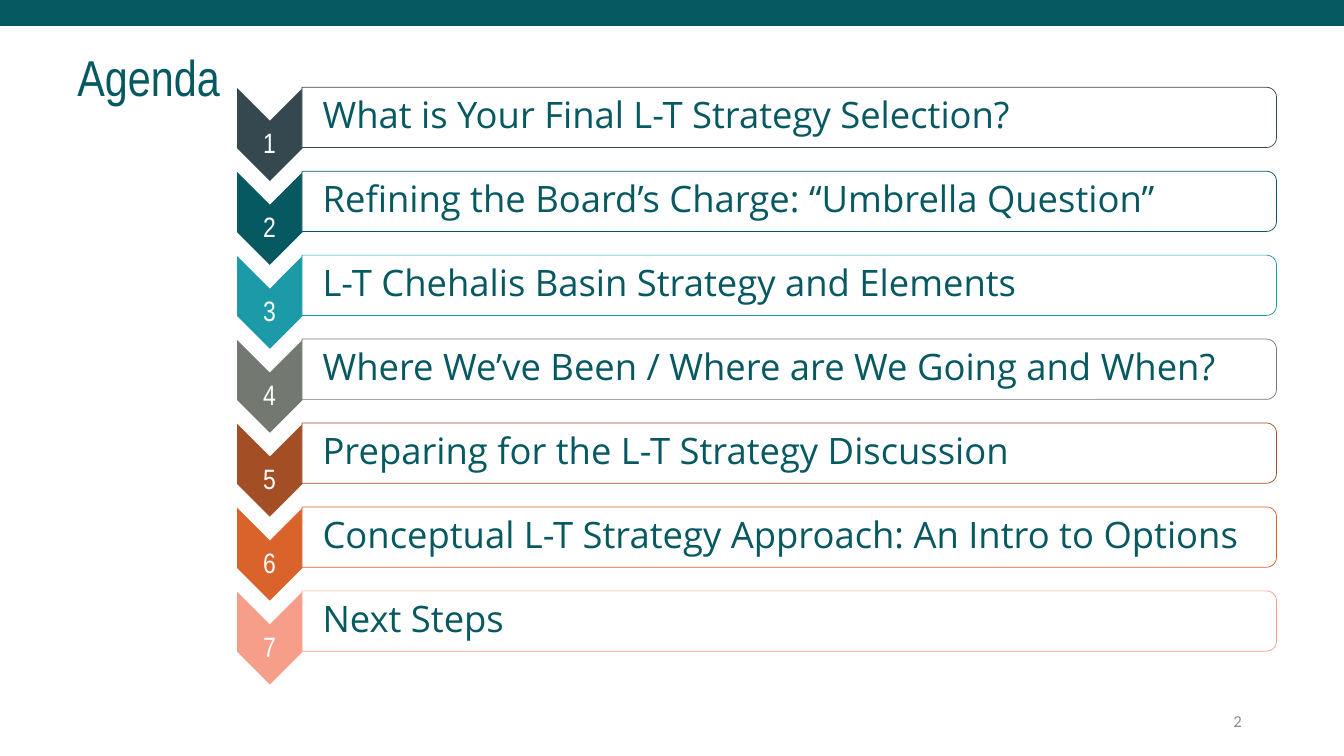
import pptx
import pptx.util
import pptx.dml.color
import pptx.enum.shapes
import pptx.enum.text
from lxml import etree

Cm = pptx.util.Cm
Pt = pptx.util.Pt
SHAPES = pptx.enum.shapes.MSO_SHAPE
ALIGN = pptx.enum.text.PP_ALIGN

COLOURS = {
    "slate": "354850",
    "teal": "065861",
    "aqua": "1D9AA7",
    "grey": "737970",
    "rust": "A34E25",
    "orange": "D9632B",
    "salmon": "F79E8B",
    "white": "FFFFFF",
    "page_number": "8C8C8C",
}
TITLE = "Agenda"
PAGE_NUMBER = "2"
AGENDA = [
    ("What is Your Final L-T Strategy Selection?", "slate"),
    ("Refining the Board’s Charge: “Umbrella Question”", "teal"),
    ("L-T Chehalis Basin Strategy and Elements", "aqua"),
    ("Where We’ve Been / Where are We Going and When?", "grey"),
    ("Preparing for the L-T Strategy Discussion", "rust"),
    ("Conceptual L-T Strategy Approach: An Intro to Options", "orange"),
    ("Next Steps", "salmon"),
]

SLIDE_WIDTH, SLIDE_HEIGHT = 33.87, 19.05
ROW_PITCH = 2.115
CHEVRON_CENTRE = (6.8, 3.39)
CHEVRON_SIZE = (2.34, 1.65)
PANEL_CENTRE = (19.89, 2.96)
PANEL_SIZE = (1.52, 24.56)
NUMBER_BOX = (5.97, 3.03, 1.65, 0.71)
ITEM_BOX = (7.62, 2.26, 24.49, 1.37)


def colour(name):
    return pptx.dml.color.RGBColor.from_string(COLOURS[name])


def add_text(slide, text, box, *, size, font, color="teal", align=ALIGN.LEFT,
             spacing=1.0, insets=(0.25, 0.13, 0.25, 0.13)):
    shape = slide.shapes.add_textbox(*map(Cm, box))
    frame = shape.text_frame
    frame.word_wrap = True
    frame.vertical_anchor = pptx.enum.text.MSO_ANCHOR.MIDDLE
    (frame.margin_left, frame.margin_top,
     frame.margin_right, frame.margin_bottom) = map(Cm, insets)
    paragraph = frame.paragraphs[0]
    paragraph.alignment = align
    paragraph.line_spacing = spacing
    run = paragraph.add_run()
    run.text = text
    run.font.size = Pt(size)
    run.font.name = font
    run.font.color.rgb = colour(color)


def add_block(slide, kind, box, fill, line=None, line_width=1.0, rotation=0):
    shape = slide.shapes.add_shape(kind, *map(Cm, box))
    shape.shadow.inherit = False
    shape.rotation = rotation
    shape.fill.solid()
    shape.fill.fore_color.rgb = colour(fill)
    if line:
        shape.line.color.rgb = colour(line)
        shape.line.width = Pt(line_width)
    else:
        shape.line.fill.background()
    return shape


def set_opacity(shape, percent):
    namespace = pptx.oxml.ns.qn("a:alpha")
    fill_colour = shape.fill._xPr.find(pptx.oxml.ns.qn("a:solidFill"))[0]
    etree.SubElement(fill_colour, namespace).set("val", str(percent * 1000))


def centred_box(centre, size, offset):
    return (centre[0] - size[0] / 2, centre[1] - size[1] / 2 + offset, *size)


def lowered_box(box, offset):
    left, top, width, height = box
    return left, top + offset, width, height


def add_agenda_row(slide, index, text, accent):
    offset = index * ROW_PITCH
    add_block(slide, SHAPES.CHEVRON,
              centred_box(CHEVRON_CENTRE, CHEVRON_SIZE, offset),
              accent, rotation=90)
    add_text(slide, str(index + 1), lowered_box(NUMBER_BOX, offset),
             size=20, font="Arial Narrow", color="white",
             align=ALIGN.CENTER, spacing=1.5, insets=(0.03,) * 4)
    panel = add_block(slide, SHAPES.ROUND_2_SAME_RECTANGLE,
                      centred_box(PANEL_CENTRE, PANEL_SIZE, offset),
                      "white", accent, 0.5, rotation=90)
    set_opacity(panel, 90)
    add_text(slide, text, lowered_box(ITEM_BOX, offset), size=26,
             font="Open Sans", spacing=0.9, insets=(0.51, 0.05, 0.05, 0.05))


def main():
    presentation = pptx.Presentation()
    presentation.slide_width = Cm(SLIDE_WIDTH)
    presentation.slide_height = Cm(SLIDE_HEIGHT)
    slide = presentation.slides.add_slide(presentation.slide_layouts[6])
    add_block(slide, SHAPES.RECTANGLE, (0, 0, SLIDE_WIDTH, 0.64), "teal", "teal")
    add_text(slide, PAGE_NUMBER, (23.93, 17.65, 7.62, 1.02), size=12,
             font="Calibri", color="page_number", align=ALIGN.RIGHT)
    add_text(slide, TITLE, (1.7, 1.07, 30.48, 1.9), size=36,
             font="Arial Narrow", spacing=0.9)
    for index, (text, accent) in enumerate(AGENDA):
        add_agenda_row(slide, index, text, accent)
    presentation.save("out.pptx")


if __name__ == "__main__":
    main()
